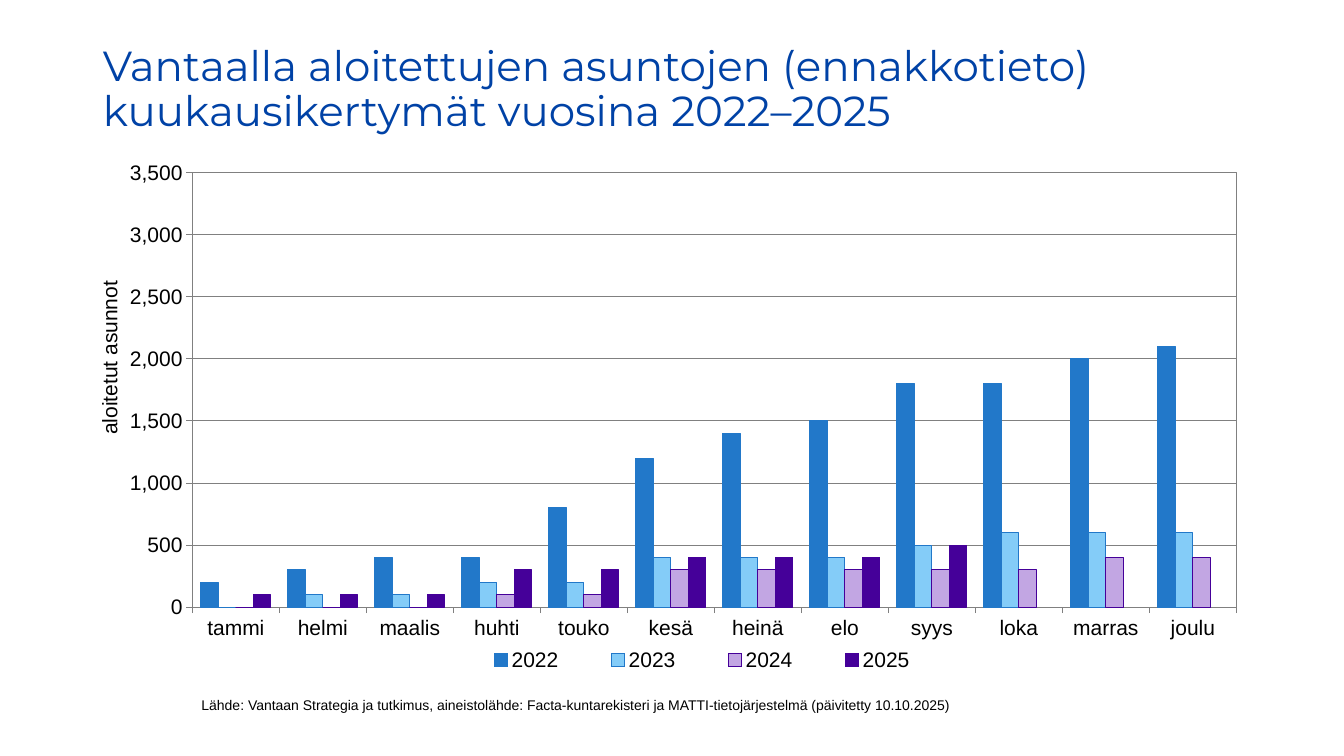
"""Build a slide with monthly cumulative housing starts in Vantaa."""
import pptx
import pptx.chart.data
import pptx.dml.color
import pptx.enum.chart
import pptx.enum.text
import pptx.oxml
import pptx.util
from pptx.util import Inches

HEADING = "Vantaalla aloitettujen asuntojen (ennakkotieto) kuukausikertymät vuosina 2022–2025"
SOURCE = ("Lähde: Vantaan Strategia ja tutkimus, aineistolähde: Facta-kuntarekisteri "
          "ja MATTI-tietojärjestelmä (päivitetty 10.10.2025)")
UNIT = "aloitetut asunnot"
MONTHS = ["tammi", "helmi", "maalis", "huhti", "touko", "kesä",
          "heinä", "elo", "syys", "loka", "marras", "joulu"]
YEARS = [
    ("2022", "2278C9", "2278C9",
     [200, 300, 400, 400, 800, 1200, 1400, 1500, 1800, 1800, 2000, 2100]),
    ("2023", "84CCF8", "2278C9",
     [0, 100, 100, 200, 200, 400, 400, 400, 500, 600, 600, 600]),
    ("2024", "C2A6E3", "450099",
     [0, 0, 0, 100, 100, 300, 300, 300, 300, 300, 400, 400]),
    ("2025", "450099", "450099",
     [100, 100, 100, 300, 300, 400, 400, 400, 500, None, None, None]),
]
GREY = "808080"
PLOT_PLACE = {"x": 0.093, "y": 0.039, "w": 0.885, "h": 0.821}
LEGEND_PLACE = {"x": 0.31, "y": 0.93, "w": 0.43, "h": 0.06}
UNIT_PLACE = {"x": 0.008, "y": 0.236}
HEADING_FONT = {"name": "Montserrat", "size": pptx.util.Pt(30), "bold": False}
SOURCE_FONT = {"name": "Arial", "size": pptx.util.Pt(10)}
CHART_FONT = {"name": "Arial", "size": pptx.util.Pt(15), "bold": False}
TICK_OUT = pptx.enum.chart.XL_TICK_MARK.OUTSIDE
MONTH_AXIS = {"major_tick_mark": TICK_OUT, "has_major_gridlines": False}
COUNT_AXIS = {"minimum_scale": 0, "maximum_scale": 3500, "major_unit": 500,
              "major_tick_mark": TICK_OUT, "has_major_gridlines": True, "has_title": True}
LEGEND = {"position": pptx.enum.chart.XL_LEGEND_POSITION.BOTTOM, "include_in_layout": False}
FRAME = {"word_wrap": True, "vertical_anchor": pptx.enum.text.MSO_ANCHOR.TOP,
         "auto_size": pptx.enum.text.MSO_AUTO_SIZE.NONE}
SPACES = pptx.oxml.ns.nsdecls("c", "a")


def rgb(value):
    return pptx.dml.color.RGBColor.from_string(value)


def apply(target, values):
    for key, value in values.items():
        setattr(target, key, value)


def style_font(font, values, color):
    apply(font, values)
    font.color.rgb = rgb(color)


def style_line(line, color):
    line.color.rgb = rgb(color)
    line.width = pptx.util.Pt(0.75)


def write(shape, text, font, color):
    shape.text_frame.text = text
    apply(shape.text_frame, FRAME)
    paragraph = shape.text_frame.paragraphs[0]
    paragraph.alignment = pptx.enum.text.PP_ALIGN.LEFT
    style_font(paragraph.runs[0].font, font, color)
    return paragraph


def place(part, position, index, target=""):
    for layout in part.findall(pptx.oxml.ns.qn("c:layout")):
        part.remove(layout)
    modes = "".join(f'<c:{side}Mode val="edge"/>' for side in "xy")
    sizes = "".join(f'<c:{key} val="{value}"/>' for key, value in position.items())
    part.insert(index, pptx.oxml.parse_xml(
        f'<c:layout {SPACES}><c:manualLayout>{target}{modes}{sizes}'
        f'</c:manualLayout></c:layout>'))


def arrange(chart):
    plot_area = chart.plots[0]._element.getparent()
    place(plot_area, PLOT_PLACE, 0, '<c:layoutTarget val="inner"/>')
    place(chart.legend._element, LEGEND_PLACE, 1)
    place(chart.value_axis.axis_title._element, UNIT_PLACE, 1)
    plot_area.append(pptx.oxml.parse_xml(
        f'<c:spPr {SPACES}><a:noFill/><a:ln w="9525"><a:solidFill>'
        f'<a:srgbClr val="{GREY}"/></a:solidFill></a:ln></c:spPr>'))


def add_starts_chart(slide):
    starts = pptx.chart.data.CategoryChartData(number_format="#,##0")
    starts.categories = MONTHS
    for year, _, _, counts in YEARS:
        starts.add_series(year, counts)
    chart = slide.shapes.add_chart(
        pptx.enum.chart.XL_CHART_TYPE.COLUMN_CLUSTERED,
        Inches(0.82), Inches(1.51), Inches(11.7), Inches(5.25), starts).chart
    style_font(chart.font, CHART_FONT, "000000")
    apply(chart, {"has_title": False, "has_legend": True})
    apply(chart.legend, LEGEND)
    apply(chart.plots[0], {"gap_width": 96, "overlap": 0, "vary_by_categories": False})
    for series, (_, fill, outline, _) in zip(chart.plots[0].series, YEARS):
        series.format.fill.solid()
        series.format.fill.fore_color.rgb = rgb(fill)
        style_line(series.format.line, outline)
    for axis, values in ((chart.category_axis, MONTH_AXIS), (chart.value_axis, COUNT_AXIS)):
        apply(axis, values)
        style_line(axis.format.line, GREY)
    counts_axis = chart.value_axis
    style_line(counts_axis.major_gridlines.format.line, GREY)
    apply(counts_axis.tick_labels, {"number_format": "#,##0", "number_format_is_linked": False})
    unit_frame = counts_axis.axis_title.text_frame
    unit_frame.text = UNIT
    style_font(unit_frame.paragraphs[0].runs[0].font, CHART_FONT, "000000")
    unit_frame._txBody.bodyPr.set("rot", "-5400000")
    unit_frame._txBody.bodyPr.set("vert", "horz")
    arrange(chart)


def main():
    deck = pptx.Presentation()
    apply(deck, {"slide_width": Inches(13.33), "slide_height": Inches(7.5)})
    slide = deck.slides.add_slide(deck.slide_layouts[5])
    heading = slide.shapes.title
    apply(heading, {"left": Inches(0.92), "top": Inches(0.4),
                    "width": Inches(11.5), "height": Inches(1.45)})
    write(heading, HEADING, HEADING_FONT, "0042A6").line_spacing = 0.9
    source = slide.shapes.add_textbox(Inches(1.9), Inches(6.86), Inches(9.16), Inches(0.42))
    write(source, SOURCE, SOURCE_FONT, "000000")
    add_starts_chart(slide)
    deck.save("out.pptx")


if __name__ == "__main__":
    main()
